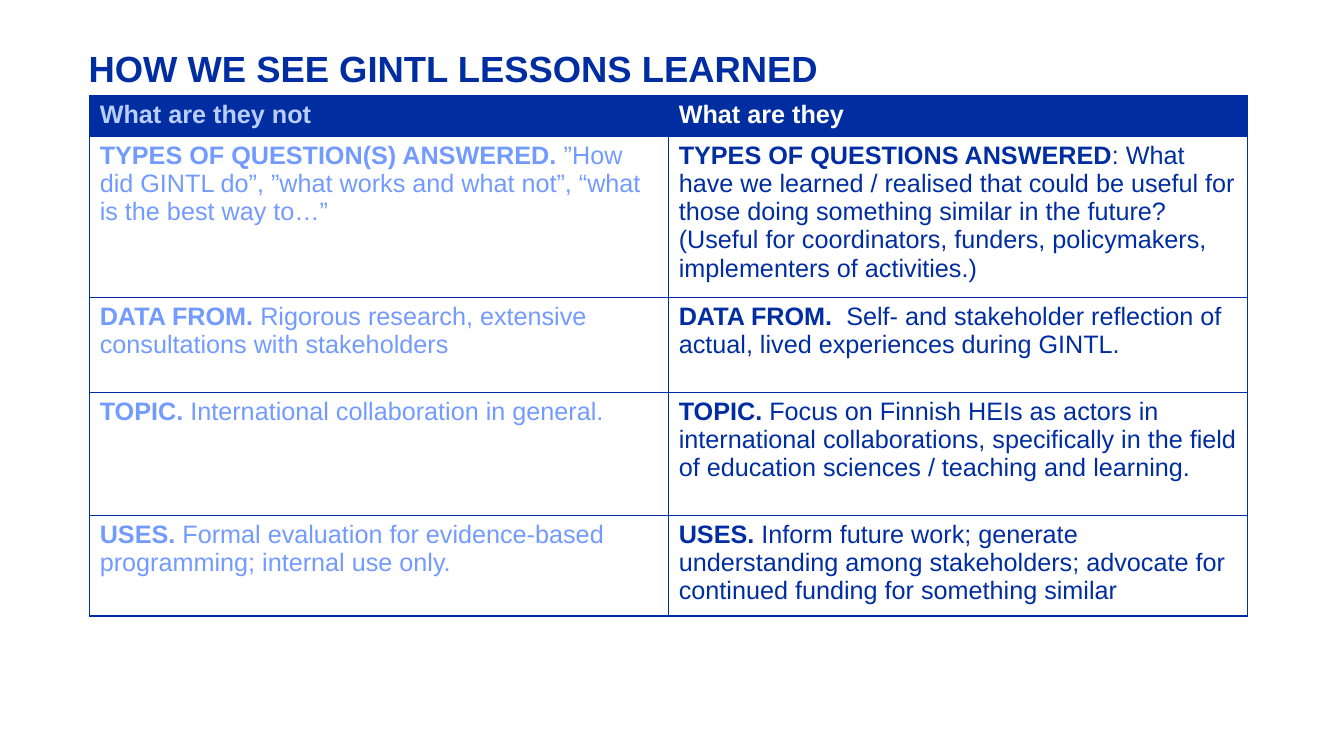
from dataclasses import dataclass

from lxml.etree import SubElement
from pptx import Presentation
from pptx.dml.color import RGBColor
from pptx.enum.text import MSO_ANCHOR
from pptx.oxml.ns import qn
from pptx.util import Pt


@dataclass(frozen=True)
class Theme:
    font: str = "Arial"
    navy: RGBColor = RGBColor(0x00, 0x2E, 0xA2)
    header_fill: RGBColor = RGBColor(0x00, 0x2E, 0xA1)
    white: RGBColor = RGBColor(0xFF, 0xFF, 0xFF)
    pale: RGBColor = RGBColor(0xB9, 0xCD, 0xFF)
    muted: RGBColor = RGBColor(0x73, 0x9B, 0xFF)
    title_size: Pt = Pt(26)
    body_size: Pt = Pt(18)
    border: Pt = Pt(1)


THEME = Theme()
TITLE = "HOW WE SEE GINTL LESSONS LEARNED"

# Each cell is a bold lead and a regular remainder
HEADINGS = (("What are they not", ""), ("What are they", ""))
COMPARISONS = (
    (("TYPES OF QUESTION(S) ANSWERED. ",
      "”How did GINTL do”, ”what works and what not”, “what is the best way to…”"),
     ("TYPES OF QUESTIONS ANSWERED",
      ": What have we learned / realised that could be useful for those doing "
      "something similar in the future? (Useful for coordinators, funders, "
      "policymakers, implementers of activities.)")),
    (("DATA FROM. ", "Rigorous research, extensive consultations with stakeholders"),
     ("DATA FROM. ",
      " Self- and stakeholder reflection of actual, lived experiences during GINTL.")),
    (("TOPIC. ", "International collaboration in general."),
     ("TOPIC. ",
      "Focus on Finnish HEIs as actors in international collaborations, "
      "specifically in the field of education sciences / teaching and learning.")),
    (("USES. ", "Formal evaluation for evidence-based programming; internal use only."),
     ("USES. ",
      "Inform future work; generate understanding among stakeholders; "
      "advocate for continued funding for something similar")),
)
ROW_HEIGHTS = (29, 108.2, 67.6, 87.8, 67.8)
COLUMN_WIDTH = 413.6


def add_run(paragraph, text, size, color, bold):
    run = paragraph.add_run()
    run.text = text
    font_format = {"name": THEME.font, "size": size, "bold": bold}
    for attribute, value in font_format.items():
        setattr(run.font, attribute, value)
    run.font.color.rgb = color


def add_title(slide):
    frame = slide.shapes.add_textbox(Pt(56.2), Pt(-1.4), Pt(827.3), Pt(69.8)).text_frame
    frame_format = {"word_wrap": True, "vertical_anchor": MSO_ANCHOR.BOTTOM}
    for attribute, value in frame_format.items():
        setattr(frame, attribute, value)
    heading = frame.paragraphs[0]
    heading.line_spacing = 0.9
    add_run(heading, TITLE, THEME.title_size, THEME.navy, True)


def add_borders(cell):
    properties = cell._tc.get_or_add_tcPr()
    for position, side in enumerate(("lnL", "lnR", "lnT", "lnB")):
        line = SubElement(properties, qn(f"a:{side}"), w=str(THEME.border))
        fill = SubElement(line, qn("a:solidFill"))
        SubElement(fill, qn("a:srgbClr"), val=str(THEME.navy))
        properties.insert(position, line)


def fill_cell(cell, content, fill, color):
    cell.fill.solid()
    cell.fill.fore_color.rgb = fill
    add_borders(cell)
    lead, remainder = content
    paragraph = cell.text_frame.paragraphs[0]
    add_run(paragraph, lead, THEME.body_size, color, True)
    if remainder:
        add_run(paragraph, remainder, THEME.body_size, color, False)


def add_comparison(slide):
    rows = (HEADINGS, *COMPARISONS)
    comparison = slide.shapes.add_table(
        len(rows), len(HEADINGS), Pt(64.1), Pt(68.4),
        Pt(COLUMN_WIDTH * len(HEADINGS)), Pt(sum(ROW_HEIGHTS))).table
    for column in comparison.columns:
        column.width = Pt(COLUMN_WIDTH)
    for row_index, contents in enumerate(rows):
        comparison.rows[row_index].height = Pt(ROW_HEIGHTS[row_index])
        is_header = row_index == 0
        fill = THEME.header_fill if is_header else THEME.white
        colors = (THEME.pale, THEME.white) if is_header else (THEME.muted, THEME.navy)
        for column_index, (content, color) in enumerate(zip(contents, colors)):
            fill_cell(comparison.cell(row_index, column_index), content, fill, color)


def main():
    deck = Presentation()
    deck.slide_width, deck.slide_height = Pt(960), Pt(540)
    slide = deck.slides.add_slide(deck.slide_layouts[6])
    # Title
    add_title(slide)
    # Comparison table
    add_comparison(slide)
    deck.save("out.pptx")


if __name__ == "__main__":
    main()
